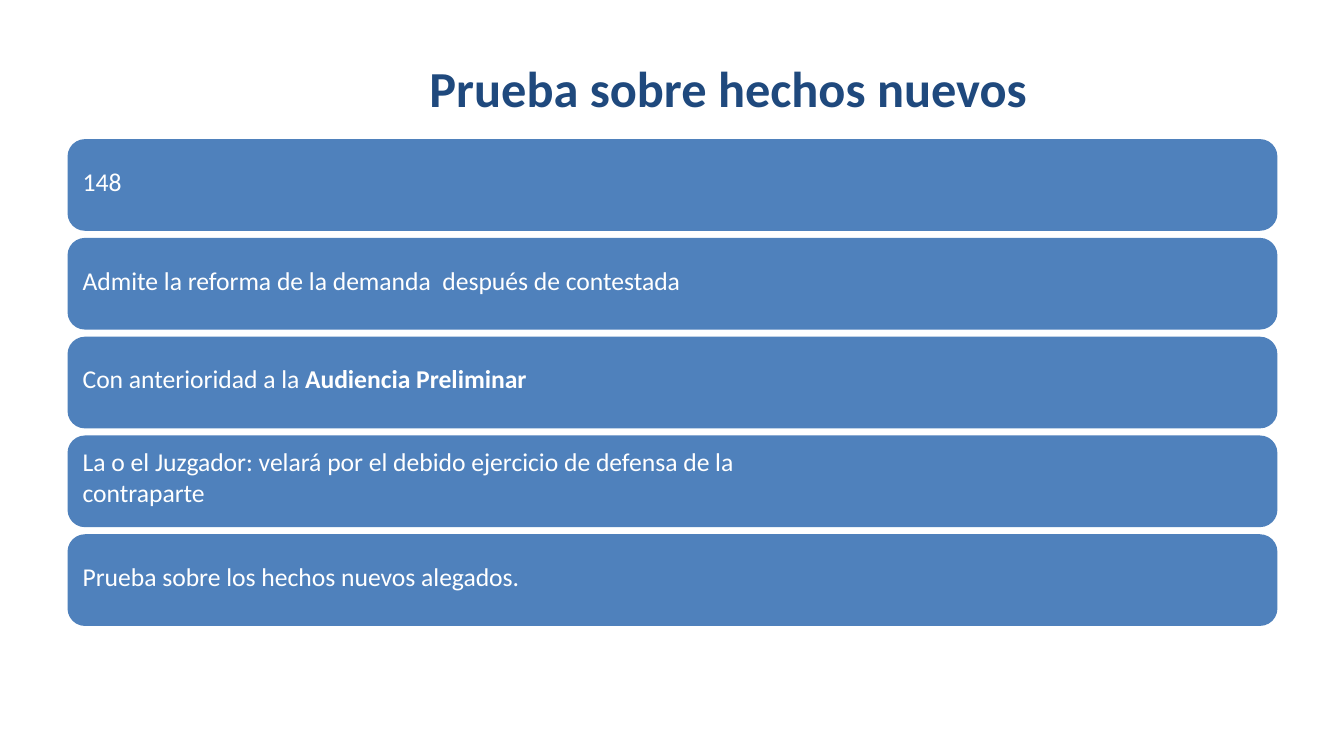
from pptx import Presentation
from pptx import util as u
from pptx.dml.color import RGBColor
from pptx.enum import shapes, text

# Theme
theme = dict(
    font="Calibri",
    navy=RGBColor.from_string("1F497D"),
    blue=RGBColor.from_string("4F81BC"),
    white=RGBColor.from_string("FFFFFF"),
    title=36,
    body=31.5,
)

deck = Presentation()
deck.slide_width, deck.slide_height = u.Inches(13.33), u.Inches(7.5)
slide = deck.slides.add_slide(deck.slide_layouts[6])


def write(lines, left, top, width, height, size, color, pitch, before, bold=False, raised=0):
    """Each line is a list of pieces; every second piece is bold."""
    box = slide.shapes.add_textbox(*map(u.Inches, (left, top, width, height)))
    frame = box.text_frame
    frame.word_wrap = True
    frame.vertical_anchor = text.MSO_ANCHOR.TOP
    frame.margin_left = frame.margin_right = frame.margin_top = frame.margin_bottom = 0
    for n, line in enumerate(lines):
        para = frame.paragraphs[0] if n == 0 else frame.add_paragraph()
        para.line_spacing = u.Pt(pitch)
        para.space_before = u.Pt(0 if n else before)
        for i, piece in enumerate(line):
            run = para.add_run()
            run.text = piece
            font = run.font
            font.name, font.size = theme["font"], u.Pt(size)
            font.color.rgb = color
            font.bold = bold or i % 2 == 1
            if raised:
                font._element.set("baseline", str(raised * 1000))


# Grid of bars: left edge, first top, row pitch, bar size
left, top, step = 0.67, 1.38, 0.98
wide, high = 12, 0.91
inset, line_high = 0.15, 0.32

rows = [
    (0.7, [["148"]]),
    (9.18, [["Admite la reforma de la demanda  después de contestada"]]),
    (6.86, [["Con anterioridad a la ", "Audiencia Preliminar"]]),
    (10, [["La o el Juzgador: velará por el debido ejercicio de defensa de la"],
          ["contraparte"]]),
    (6.74, [["Prueba sobre los hechos nuevos alegados."]]),
]

# Title
write([["Prueba sobre hechos nuevos"]], 4.26, 0.7, 6.27, 0.53,
      size=theme["title"], color=theme["navy"], pitch=33.6, before=1.7, bold=True)

# Bars, each with its text centred in height
for n, (span, lines) in enumerate(rows):
    y = top + n * step
    bar = slide.shapes.add_shape(shapes.MSO_SHAPE.ROUNDED_RECTANGLE,
                                 *map(u.Inches, (left, y, wide, high)))
    bar.adjustments[0] = 0.19
    bar.shadow.inherit = False
    bar.fill.solid()
    bar.fill.fore_color.rgb = theme["blue"]
    bar.line.fill.background()

    tall = line_high * len(lines)
    write(lines, left + inset, y + (high - tall) / 2 + 0.01, span, tall,
          size=theme["body"], color=theme["white"], pitch=22.5, before=1.1, raised=3)

deck.save("out.pptx")
